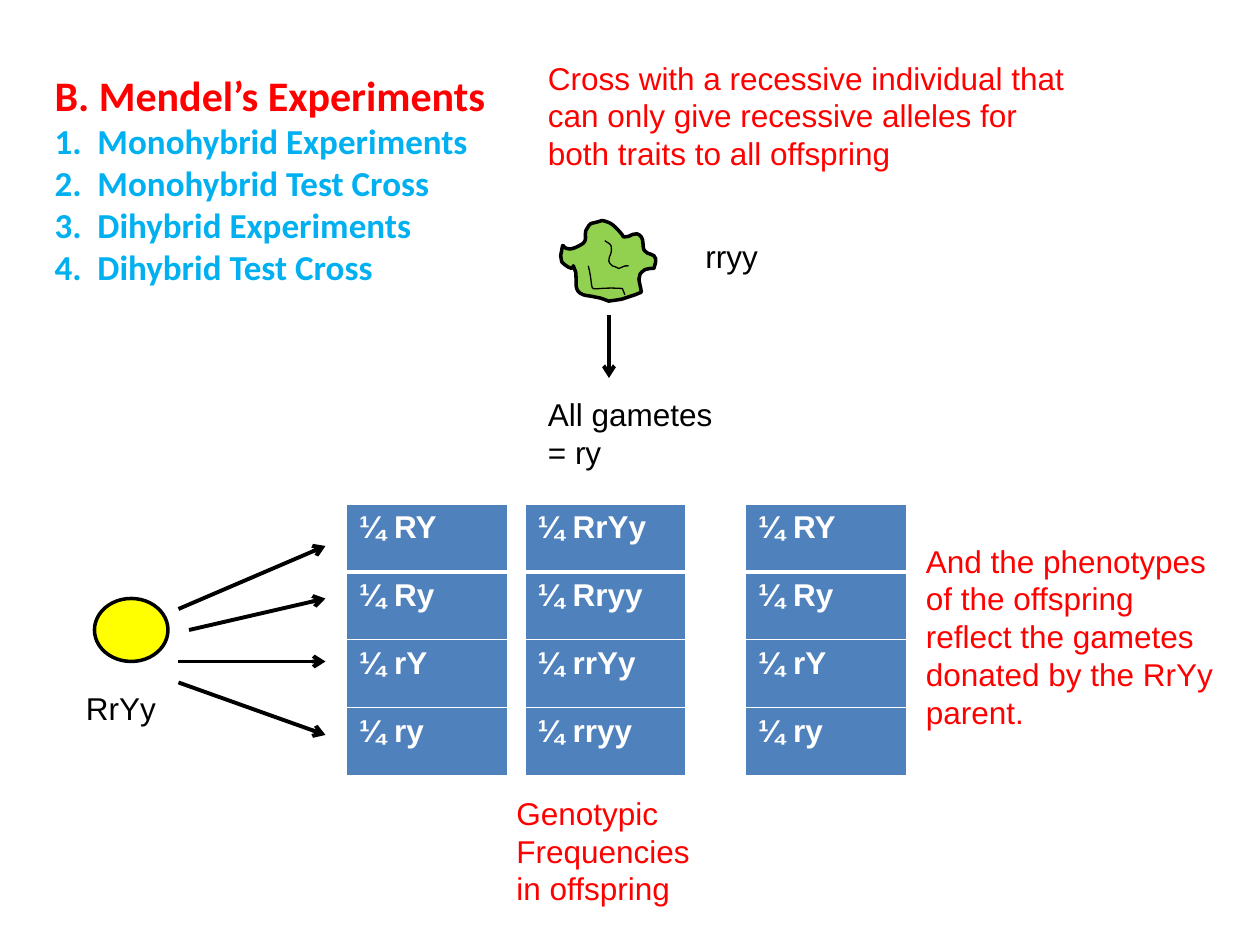
from lxml.etree import SubElement
from pptx import Presentation
from pptx.dml.color import RGBColor
from pptx.enum.shapes import MSO_CONNECTOR as Connector, MSO_SHAPE as Preset
from pptx.enum.text import MSO_ANCHOR as Anchor, MSO_AUTO_SIZE as AutoSize, PP_ALIGN as Align
from pptx.oxml.ns import qn
from pptx.util import Pt

RED = RGBColor(0xFF, 0x00, 0x00)
SKY = RGBColor(0x00, 0xB0, 0xF0)
BLACK = RGBColor(0x00, 0x00, 0x00)
WHITE = RGBColor(0xFF, 0xFF, 0xFF)
YELLOW = RGBColor(0xFF, 0xFF, 0x00)
GREEN = RGBColor(0x92, 0xD0, 0x50)
BLUE = RGBColor(0x4F, 0x81, 0xBD)

HEADING_PLACE = (24, 36, 438, 170)
HEADING = [
    ("B. Mendel’s Experiments", 24, RED),
    ("1.  Monohybrid Experiments", 20, SKY),
    ("2.  Monohybrid Test Cross", 20, SKY),
    ("3.  Dihybrid Experiments", 20, SKY),
    ("4.  Dihybrid Test Cross", 20, SKY),
]

LABELS = [
    ("Cross with a recessive individual that can only give recessive alleles "
     "for both traits to all offspring", (306, 30, 318, 73), RED),
    ("RrYy", (42, 390, 84, 29), BLACK),
    ("rryy", (396, 132, 126, 29), BLACK),
    ("All gametes = ry", (306, 222, 120, 51), BLACK),
    ("Genotypic Frequencies in offspring", (288, 450, 126, 73), RED),
    ("And the phenotypes of the offspring reflect the gametes donated by "
     "the RrYy parent.", (522, 306, 180, 117), RED),
]

TABLE_TOP, COLUMN_WIDTH, ROW_HEIGHT = 288, 92, 38.8
TABLES = [
    (198, ["¼ RY", "¼ Ry", "¼ rY", "¼ ry"]),
    (300, ["¼ RrYy", "¼ Rryy", "¼ rrYy", "¼ rryy"]),
    (426, ["¼ RY", "¼ Ry", "¼ rY", "¼ ry"]),
]

ARROWS = [
    (102, 348, 186, 312),
    (108, 360, 186, 342),
    (102, 378, 186, 378),
    (102, 390, 186, 420),
    (348, 180, 348, 216),
]

ROUND_SEED = (54, 342, 42, 36)

# Each outline is a start point, then cubic curves (6 numbers) or lines (2 numbers).
SEED_OUTLINE = [
    (357.1, 135.4),
    (354.2, 134.6, 359.3, 137.5, 351.4, 129.6),
    (349.2, 127.4, 347, 126.7, 344.2, 126),
    (335.5, 128.9, 338.4, 126, 334.8, 131.8),
    (334.1, 133.9, 335.5, 137.5, 333.4, 139),
    (318.2, 149, 323.3, 131.8, 320.4, 146.2),
    (321.1, 147.6, 320.4, 149.8, 321.8, 150.5),
    (331.2, 158.4, 325.4, 146.2, 329, 155.5),
    (329.8, 162, 327.6, 166.3, 333.4, 168.5),
    (335.5, 169.2, 338.4, 169.2, 340.6, 169.9),
    (342.7, 169.9, 347.8, 172.1, 347.8, 172.1),
    (358.6, 170.6, 353.5, 171.4, 362.9, 168.5),
    (366.5, 167),
    (365.8, 160.6, 362.9, 157.7, 368.6, 154.1),
    (370.1, 153.4, 372.2, 153.4, 373.7, 153.4),
    (374.4, 150.5, 375.8, 148.3, 373.7, 146.2),
    (373, 145.4, 371.5, 145.4, 370.1, 144.7),
    (369.4, 144, 367.9, 143.3, 367.9, 142.6),
    (367.2, 140.4, 367.9, 137.5, 366.5, 135.4),
    (362.9, 131, 360, 136.1, 357.1, 135.4),
]
SEED_WRINKLES = [
    [(345.6, 137.5),
     (346.3, 138.2, 348.5, 139, 349.2, 140.4),
     (350.6, 146.9, 344.9, 147.6, 349.9, 151.9),
     (351.4, 152.6, 352.8, 152.6, 353.5, 153.4),
     (357.8, 151.9, 355.7, 151.9, 359.3, 151.9)],
    [(336.2, 151.9),
     (336.2, 153.4, 337, 154.1, 337, 155.5),
     (339.8, 169.9, 334.1, 163.4, 355.7, 164.9),
     (357.1, 168.5)],
]


def in_points(lengths):
    return [Pt(length) for length in lengths]


def add_span(para, text, size, color, font="Arial", bold=False):
    span = para.add_run()
    span.text = text
    span.font.name, span.font.size, span.font.bold = font, Pt(size), bold
    span.font.color.rgb = color


def add_heading(page):
    title = page.shapes.title
    title.left, title.top, title.width, title.height = in_points(HEADING_PLACE)
    frame = title.text_frame
    frame.word_wrap, frame.auto_size = True, AutoSize.NONE
    frame.vertical_anchor = Anchor.TOP
    for index, (text, size, color) in enumerate(HEADING):
        para = frame.add_paragraph() if index else frame.paragraphs[0]
        para.alignment = Align.LEFT
        add_span(para, text, size, color, "Calibri", True)


def add_label(page, text, place, color):
    frame = page.shapes.add_textbox(*in_points(place)).text_frame
    frame.word_wrap = True
    add_span(frame.paragraphs[0], text, 18, color)


def add_borders(cell, top, bottom):
    props = cell._tc.get_or_add_tcPr()
    for side, width in (("L", 1), ("R", 1), ("T", top), ("B", bottom)):
        border = SubElement(props, qn("a:ln" + side), w=str(Pt(width)))
        fill = SubElement(border, qn("a:solidFill"))
        SubElement(fill, qn("a:srgbClr"), val=str(WHITE))


def add_table(page, left, genotypes):
    place = in_points((left, TABLE_TOP, COLUMN_WIDTH, ROW_HEIGHT * len(genotypes)))
    table = page.shapes.add_table(len(genotypes), 1, *place).table
    table.horz_banding = False
    for row, genotype in enumerate(genotypes):
        table.rows[row].height = Pt(ROW_HEIGHT)
        cell = table.cell(row, 0)
        add_borders(cell, 3 if row == 1 else 1, 3 if row == 0 else 1)
        cell.fill.solid()
        cell.fill.fore_color.rgb = BLUE
        add_span(cell.text_frame.paragraphs[0], genotype, 18, WHITE, bold=True)


def add_arrow(page, ends):
    arrow = page.shapes.add_connector(Connector.STRAIGHT, *in_points(ends))
    arrow.line.color.rgb, arrow.line.width = BLACK, Pt(2.25)
    SubElement(arrow.line._get_or_add_ln(), qn("a:tailEnd"), type="arrow")
    SubElement(arrow._element.spPr, qn("a:effectLst"))


def paint(shape, line_width, color=None):
    shape.shadow.inherit = False
    shape.line.color.rgb, shape.line.width = BLACK, Pt(line_width)
    if color is None:
        shape.fill.background()
    else:
        shape.fill.solid()
        shape.fill.fore_color.rgb = color


def bend(shape, segments):
    left, top = shape.left, shape.top
    for straight, segment in zip(list(shape._element.iter(qn("a:lnTo"))), segments):
        if len(segment) == 2:
            continue
        curve = straight.getparent().makeelement(qn("a:cubicBezTo"))
        for x, y in zip(segment[::2], segment[1::2]):
            SubElement(curve, qn("a:pt"), x=str(Pt(x) - left), y=str(Pt(y) - top))
        straight.getparent().replace(straight, curve)


def add_outline(group, outline, line_width, color=None):
    start, *corners = [in_points(segment[-2:]) for segment in outline]
    builder = group.shapes.build_freeform(*start)
    builder.add_line_segments(corners, close=color is not None)
    shape = builder.convert_to_shape()
    bend(shape, outline[1:])
    paint(shape, line_width, color)


def main():
    deck = Presentation()
    deck.slide_width, deck.slide_height = Pt(720), Pt(540)
    page = deck.slides.add_slide(deck.slide_layouts[5])

    add_heading(page)
    for label in LABELS:
        add_label(page, *label)
    paint(page.shapes.add_shape(Preset.OVAL, *in_points(ROUND_SEED)), 2, YELLOW)
    for left, genotypes in TABLES:
        add_table(page, left, genotypes)
    for ends in ARROWS:
        add_arrow(page, ends)

    wrinkled_seed = page.shapes.add_group_shape()
    add_outline(wrinkled_seed, SEED_OUTLINE, 2, GREEN)
    for wrinkle in SEED_WRINKLES:
        add_outline(wrinkled_seed, wrinkle, 0.75)
    deck.save("out.pptx")


if __name__ == "__main__":
    main()
